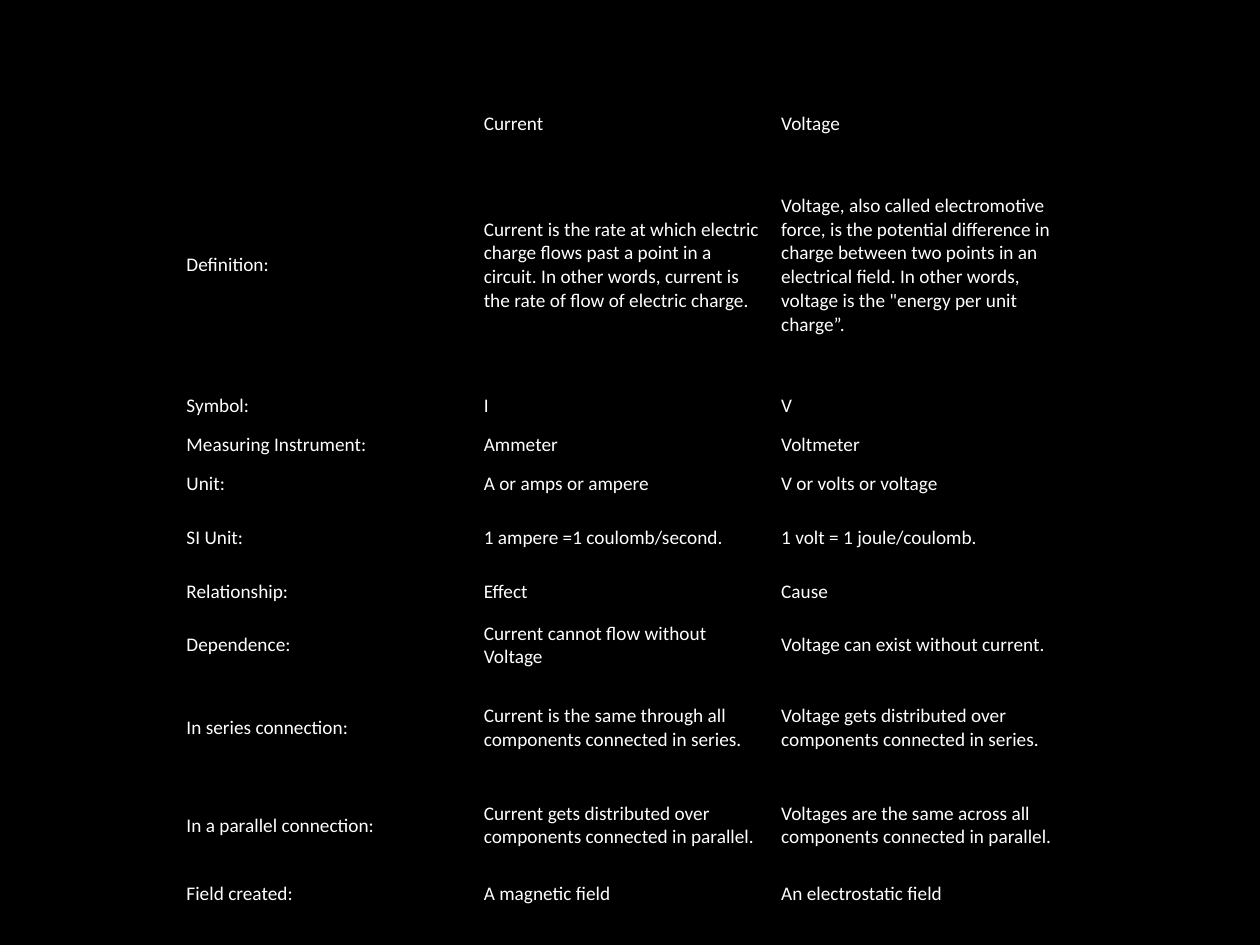
"""Build a slide with a table that compares current and voltage."""
from dataclasses import dataclass

from lxml import etree
from pptx import Presentation
from pptx import util as u
from pptx.dml import color
from pptx.enum import text
from pptx.oxml import ns


@dataclass(frozen=True)
class Theme:
    background: color.RGBColor = color.RGBColor(0, 0, 0)
    ink: color.RGBColor = color.RGBColor(255, 255, 255)
    font: str = "Calibri"
    size: int = 11
    table_style: str = "{2D5ABB26-0587-4C30-8999-92F81FD0307C}"


theme = Theme()
LEFT, TOP, WIDTH, HEIGHT = 1.42, 0.83, 7.08, 6.42
ROW_PADDING = 0.08

# Each row: height in text lines, then label, current and voltage
ROWS = [
    (1, "", "Current", "Voltage"),
    (8, "Definition:",
     "Current is the rate at which electric charge flows past a point in a circuit. "
     "In other words, current is the rate of flow of electric charge.",
     "Voltage, also called electromotive force, is the potential difference in charge "
     "between two points in an electrical field. In other words, voltage is the "
     "\"energy per unit charge”."),
    (1, "Symbol:", "I", "V"),
    (1, "Measuring Instrument:", "Ammeter", "Voltmeter"),
    (1, "Unit:", "A or amps or ampere", "V or volts or voltage"),
    (2, "SI Unit:", "1 ampere =1 coulomb/second.", "1 volt = 1 joule/coulomb."),
    (1, "Relationship:", "Effect", "Cause"),
    (2, "Dependence:", "Current cannot flow without Voltage",
     "Voltage can exist without current."),
    (3, "In series connection:",
     "Current is the same through all components connected in series.",
     "Voltage gets distributed over components connected in series."),
    (3, "In a parallel connection:",
     "Current gets distributed over components connected in parallel.",
     "Voltages are the same across all components connected in parallel."),
    (1, "Field created:", "A magnetic field", "An electrostatic field"),
]

prs = Presentation()
prs.slide_width, prs.slide_height = u.Inches(10), u.Inches(7.5)
s = prs.slides.add_slide(prs.slide_layouts[6])
s.background.fill.solid()
s.background.fill.fore_color.rgb = theme.background

frame = s.shapes.add_table(len(ROWS), 3, u.Inches(LEFT), u.Inches(TOP),
                           u.Inches(WIDTH), u.Inches(HEIGHT))
table = frame.table
table.first_row = table.horz_banding = False
table._tbl.tblPr.find(ns.qn("a:tableStyleId")).text = theme.table_style
line = (HEIGHT - ROW_PADDING * len(ROWS)) / sum(row[0] for row in ROWS)

for row, (lines, *words) in zip(table.rows, ROWS):
    row.height = u.Inches(ROW_PADDING + lines * line)
    for cell, word in zip(row.cells, words):
        cell.fill.background()
        cell.vertical_anchor = text.MSO_ANCHOR.MIDDLE
        cell.margin_left = cell.margin_right = u.Inches(0.06)
        cell.margin_top = cell.margin_bottom = u.Inches(0.03)
        p = cell.text_frame.paragraphs[0]
        p.font.name = theme.font
        p.font.size = u.Pt(theme.size)
        p.font.color.rgb = theme.ink
        if word:
            p.add_run().text = word
        else:
            etree.SubElement(p._p, ns.qn("a:endParaRPr"), sz=str(theme.size * 100))

prs.save("out.pptx")
